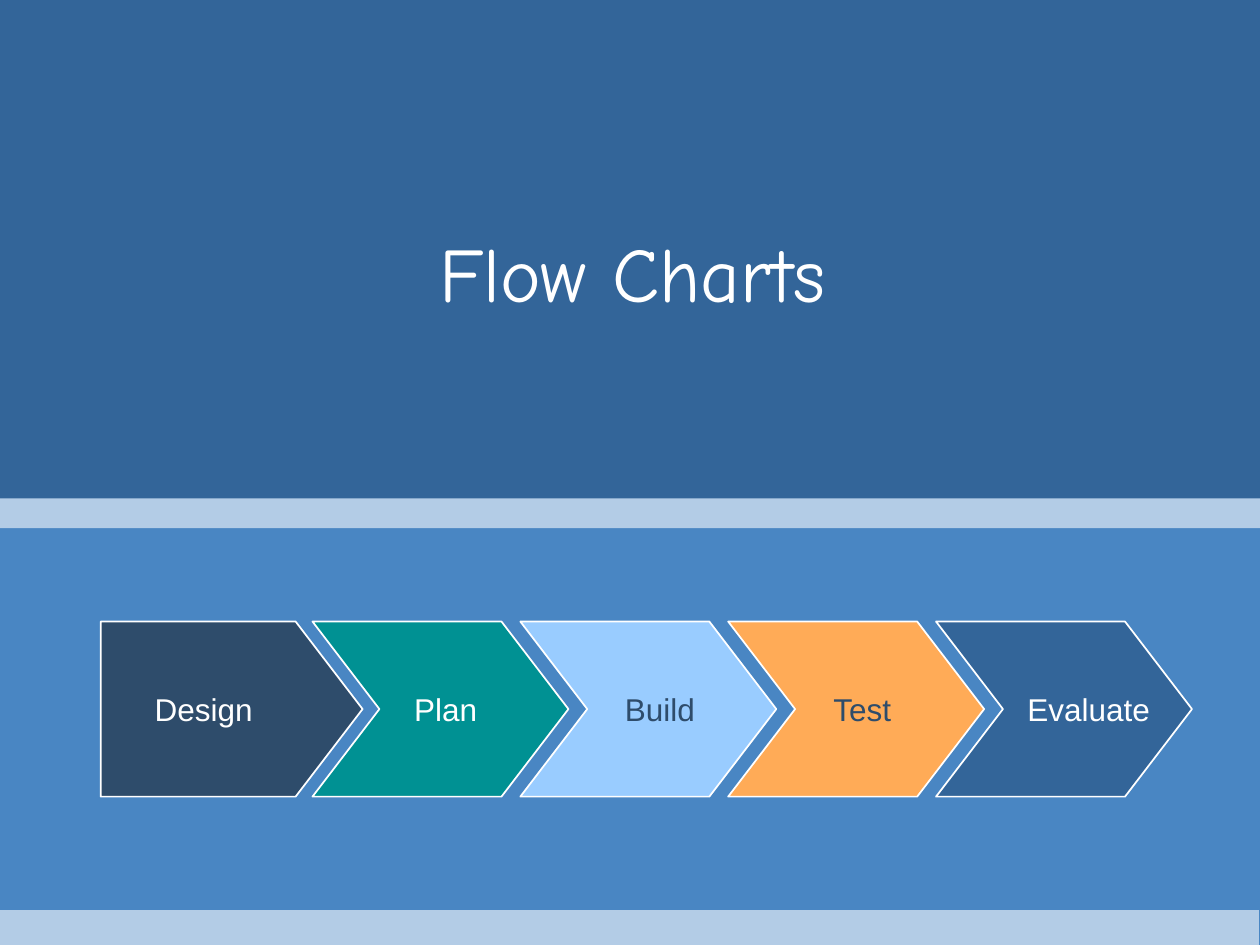
"""Build a title slide with a five-step process of chevrons."""
from pptx import Presentation
from pptx import util as u
from pptx.dml.color import RGBColor
from pptx.enum import shapes, text

WHITE, NAVY, BLUE, PALE = "FFFFFF", "2E4C6B", "336599", "B3CCE6"


def paint(fill, color):
    fill.solid()
    fill.fore_color.rgb = RGBColor.from_string(color)


def add_label(words, left, top, width, height, font, size, color):
    box = page.shapes.add_textbox(u.Cm(left), u.Cm(top), u.Cm(width), u.Cm(height))
    para = box.text_frame.paragraphs[0]
    para.text = words
    para.font.name = font
    para.font.size = u.Pt(size)
    paint(para.font.fill, color)
    return box.text_frame


deck = Presentation()
deck.slide_width, deck.slide_height = u.Cm(25.4), u.Cm(19.05)
page = deck.slides.add_slide(deck.slide_layouts[6])
paint(page.background.fill, "4986C3")

bands = [
    (0, 25.4, 10.19, BLUE),
    (18.35, 25.38, 0.75, PALE),
    (10.05, 25.4, 0.6, PALE),
]
for top, width, height, color in bands:
    band = page.shapes.add_shape(
        shapes.MSO_SHAPE.RECTANGLE, 0, u.Cm(top), u.Cm(width), u.Cm(height))
    band.shadow.inherit = False
    paint(band.fill, color)
    band.line.fill.background()

title = add_label("Flow Charts", 7, 4.12, 11.5, 2.7, "Comic Neue", 44, WHITE)
title.word_wrap = True
title.vertical_anchor = text.MSO_ANCHOR.MIDDLE
title.paragraphs[0].alignment = text.PP_ALIGN.CENTER

step_top, step_height, pitch, tip = 12.53, 3.53, 4.19, 1.35
steps = [
    ("Design", NAVY, WHITE, 2.87, 2.5),
    ("Plan", "009193", WHITE, 8.1, 1.8),
    ("Build", "99CCFF", NAVY, 12.35, 1.95),
    ("Test", "FFAB57", NAVY, 16.55, 1.77),
    ("Evaluate", BLUE, WHITE, 20.46, 3.02),
]
for index, (name, color, ink, label_left, label_width) in enumerate(steps):
    if index == 0:
        kind, left, width = shapes.MSO_SHAPE.PENTAGON, 2.03, 5.28
    else:
        kind, left, width = shapes.MSO_SHAPE.CHEVRON, 6.3 + pitch * (index - 1), 5.16
    step = page.shapes.add_shape(
        kind, u.Cm(left), u.Cm(step_top), u.Cm(width), u.Cm(step_height))
    step.adjustments[0] = tip / step_height
    step.shadow.inherit = False
    paint(step.fill, color)
    paint(step.line.fill, WHITE)
    step.line.width = u.Pt(1)
    label = add_label(name, label_left, 13.79, label_width, 1.02, "Arial", 18, ink)
    label.word_wrap = False
    label.auto_size = text.MSO_AUTO_SIZE.SHAPE_TO_FIT_TEXT

deck.save("out.pptx")
